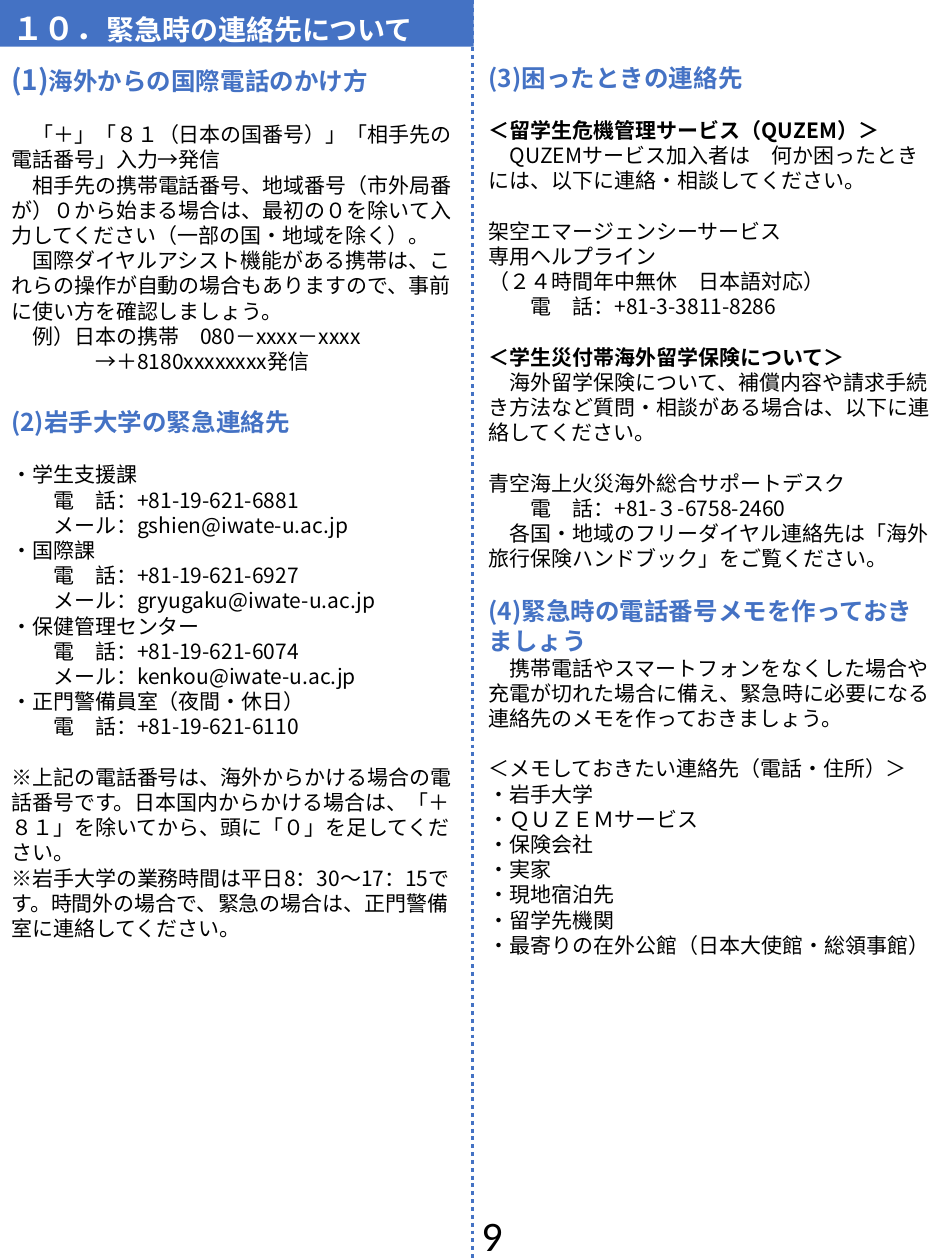
from pptx import Presentation
from pptx.util import Inches, Pt
from pptx.dml.color import RGBColor as RGB
from pptx.enum.dml import MSO_LINE as Dash
from pptx.enum.shapes import MSO_SHAPE as Shape, MSO_CONNECTOR as Conn
from pptx.enum.text import MSO_ANCHOR as Anchor, MSO_AUTO_SIZE as Auto
from pptx.oxml.ns import qn
from lxml.etree import SubElement as Sub

THEME = {
    "blue": RGB(0x44, 0x72, 0xC4), "black": RGB(0, 0, 0), "white": RGB(255, 255, 255),
    "font": "Noto Sans CJK JP", "num": "Calibri",
    "body": 12, "head": 14, "mark": 16, "title": 16, "lead": 18, "page": 24,
    "gap": 14.4, "wide": 19.2,
}

# Content: (kind, text, gap above)
TITLE = [("lead", "１０．"), ("title", "緊急時の連絡先について")]
PAGE = "9"
LEFT = [
    ("head", [("mark", "(1)"), ("head", "海外からの国際電話のかけ方")], ""),
    ("para", "「＋」「８１（日本の国番号）」「相手先の電話番号」入力→発信", "gap"),
    ("para", "相手先の携帯電話番号、地域番号（市外局番が）０から始まる場合は、最初の０を除いて入力してください（一部の国・地域を除く）。", ""),
    ("para", "国際ダイヤルアシスト機能がある携帯は、これらの操作が自動の場合もありますので、事前に使い方を確認しましょう。", ""),
    ("para", "例）日本の携帯　080－xxxx－xxxx", ""),
    ("deep", "→＋8180xxxxxxxx発信", ""),
    ("head", "(2)岩手大学の緊急連絡先", "wide"),
    ("text", "・学生支援課", "gap"),
    ("call", "電　話：+81-19-621-6881", ""),
    ("call", "メール：gshien@iwate-u.ac.jp", ""),
    ("text", "・国際課", ""),
    ("call", "電　話：+81-19-621-6927", ""),
    ("call", "メール：gryugaku@iwate-u.ac.jp", ""),
    ("text", "・保健管理センター", ""),
    ("call", "電　話：+81-19-621-6074", ""),
    ("call", "メール：kenkou@iwate-u.ac.jp", ""),
    ("text", "・正門警備員室（夜間・休日）", ""),
    ("call", "電　話：+81-19-621-6110", ""),
    ("text", "※上記の電話番号は、海外からかける場合の電話番号です。日本国内からかける場合は、「＋８１」を除いてから、頭に「０」を足してください。", "gap"),
    ("text", "※岩手大学の業務時間は平日8：30～17：15です。時間外の場合で、緊急の場合は、正門警備室に連絡してください。", ""),
]
RIGHT = [
    ("head", "(3)困ったときの連絡先", ""),
    ("bold", "＜留学生危機管理サービス（QUZEM）＞", "gap"),
    ("para", "QUZEMサービス加入者は　何か困ったときには、以下に連絡・相談してください。", ""),
    ("text", "架空エマージェンシーサービス", "gap"),
    ("text", "専用ヘルプライン", ""),
    ("text", "（２４時間年中無休　日本語対応）", ""),
    ("call", "電　話：+81-3-3811-8286", ""),
    ("bold", "＜学生災付帯海外留学保険について＞", "gap"),
    ("para", "海外留学保険について、補償内容や請求手続き方法など質問・相談がある場合は、以下に連絡してください。", ""),
    ("text", "青空海上火災海外総合サポートデスク", "gap"),
    ("call", "電　話：+81-３-6758-2460", ""),
    ("para", "各国・地域のフリーダイヤル連絡先は「海外旅行保険ハンドブック」をご覧ください。", ""),
    ("head", "(4)緊急時の電話番号メモを作っておきましょう", "gap"),
    ("para", "携帯電話やスマートフォンをなくした場合や充電が切れた場合に備え、緊急時に必要になる連絡先のメモを作っておきましょう。", ""),
    ("text", "＜メモしておきたい連絡先（電話・住所）＞", "gap"),
    *[("text", "・" + name, "") for name in (
        "岩手大学", "ＱＵＺＥＭサービス", "保険会社", "実家", "現地宿泊先",
        "留学先機関", "最寄りの在外公館（日本大使館・総領事館）")],
]

# First-line indent of each kind, in characters
INDENT = {"para": 1, "call": 2, "deep": 4}


def put(par, text, size, color="black", bold=False, font="font"):
    run = par.add_run()
    run.text = text
    form = {"size": Pt(THEME[size]), "bold": bold, "name": THEME[font]}
    for key, val in form.items():
        setattr(run.font, key, val)
    run.font.color.rgb = THEME[color]
    Sub(run.font._element, qn("a:ea"), typeface=THEME[font])


def frame(shape, **form):
    for key, val in form.items():
        setattr(shape.text_frame, key, val)
    return shape.text_frame


def column(slide, left, high, rows):
    box = slide.shapes.add_textbox(Inches(left), Inches(0.45), Inches(3.75), Inches(high))
    tf = frame(box, word_wrap=True, auto_size=Auto.SHAPE_TO_FIT_TEXT)
    for i, (kind, text, gap) in enumerate(rows):
        par = tf.add_paragraph() if i else tf.paragraphs[0]
        if gap:
            par.space_before = Pt(THEME[gap])
        if kind in INDENT:
            par._p.get_or_add_pPr().set("indent", str(Pt(THEME["body"] * INDENT[kind])))
        head = kind == "head"
        size = "head" if head else "body"
        parts = text if isinstance(text, list) else [(size, text)]
        for size, part in parts:
            put(par, part, size, "blue" if head else "black", head or kind == "bold")


def main():
    prs = Presentation()
    prs.slide_width, prs.slide_height = Inches(7.5), Inches(10)
    slide = prs.slides.add_slide(prs.slide_layouts[6])

    # Dotted line between the columns
    rule = slide.shapes.add_connector(Conn.STRAIGHT, Inches(3.75), 0, Inches(3.75), Inches(10))
    for key, val in {"width": Pt(2.25), "dash_style": Dash.ROUND_DOT}.items():
        setattr(rule.line, key, val)
    rule.line.color.rgb = THEME["blue"]
    Sub(rule._element.spPr, qn("a:effectLst"))

    # Columns
    column(slide, -0.01, 7.57, LEFT)
    column(slide, 3.78, 7.47, RIGHT)

    # Title bar
    bar = slide.shapes.add_shape(Shape.RECTANGLE, 0, 0, Inches(3.76), Inches(0.37))
    bar.shadow.inherit = False
    bar.fill.solid()
    bar.fill.fore_color.rgb = THEME["blue"]
    bar.line.fill.background()
    tf = frame(bar, vertical_anchor=Anchor.BOTTOM, word_wrap=True, margin_top=0, margin_bottom=0)
    tf.paragraphs[0].alignment = 1
    for size, text in TITLE:
        put(tf.paragraphs[0], text, size, "white", True)

    # Page number
    box = slide.shapes.add_textbox(Inches(3.78), Inches(9.6), Inches(0.25), Inches(0.4))
    tf = frame(box, word_wrap=False, auto_size=Auto.SHAPE_TO_FIT_TEXT, margin_top=0,
               margin_bottom=0, margin_left=Inches(0.04), margin_right=Inches(0.04))
    put(tf.paragraphs[0], PAGE, "page", font="num")

    prs.save("out.pptx")


if __name__ == "__main__":
    main()
